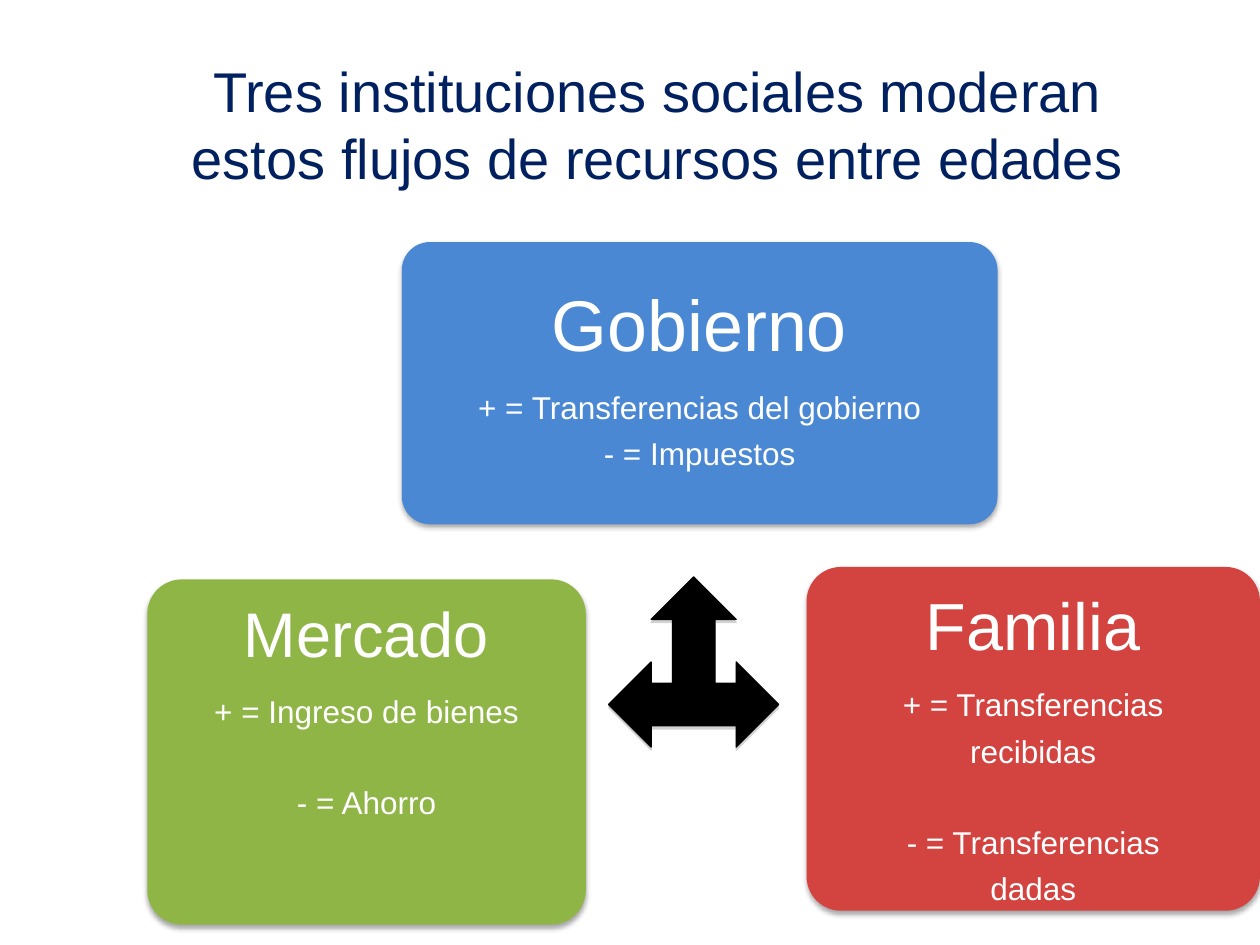
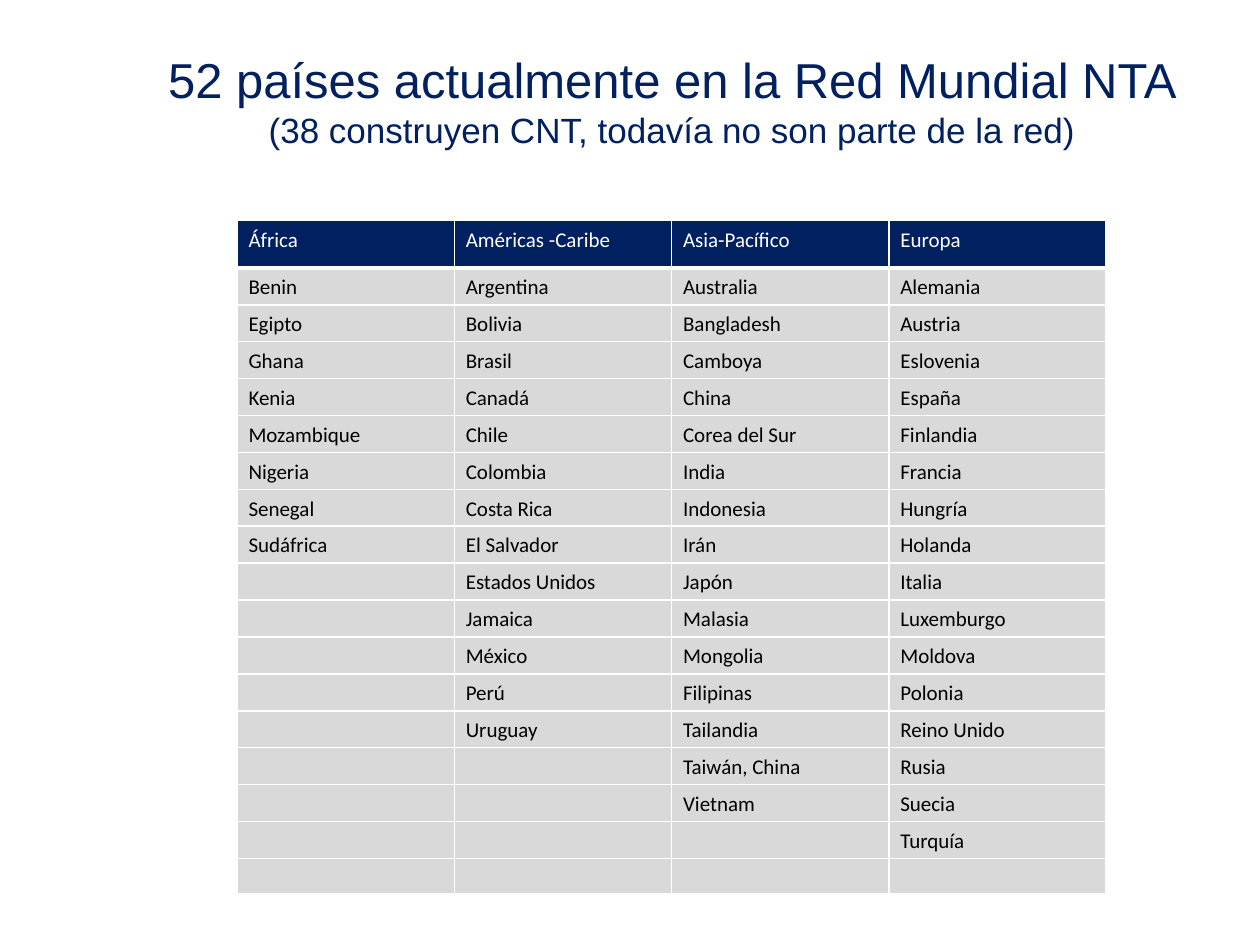
import itertools

import pptx
import pptx.dml.color
import pptx.enum.shapes
import pptx.enum.text
import pptx.oxml
import pptx.oxml.ns
import pptx.util
from pptx.util import Cm, Pt

NAVY, WHITE, BLACK, GRAY = "002060", "FFFFFF", "000000", "D9D9D9"
CENTER = pptx.enum.text.PP_ALIGN.CENTER
MIDDLE = pptx.enum.text.MSO_ANCHOR.MIDDLE
TOP = pptx.enum.text.MSO_ANCHOR.TOP
SHAPES = pptx.enum.shapes.MSO_SHAPE
NAMESPACE = pptx.oxml.ns.nsdecls("a")


def color(hex_string):
    return pptx.dml.color.RGBColor.from_string(hex_string)


def add_shadow(shape, hex_string, blur):
    """Soft shadow straight below the shape."""
    shape.shadow.inherit = False
    effects = shape._element.spPr.find(pptx.oxml.ns.qn("a:effectLst"))
    effects.append(pptx.oxml.parse_xml(
        f'<a:outerShdw {NAMESPACE} blurRad="{Pt(blur)}" dist="{Pt(1.8)}" dir="5400000" '
        f'rotWithShape="0"><a:srgbClr val="{hex_string}"><a:alpha val="35000"/>'
        '</a:srgbClr></a:outerShdw>'))


presentation = pptx.Presentation()
presentation.slide_width = Cm(25.4)
presentation.slide_height = Cm(19.05)

# Slides with their titles: box, then lines with sizes
titles = [
    ((3.1, 0.91, 20.32, 3.18), [("Tres instituciones sociales moderan", 32),
                                ("estos flujos de recursos entre edades", 32)]),
    ((2.97, 0.86, 21.16, 2.31), [("52 países actualmente en la Red Mundial NTA", 28),
                                 ("(38 construyen CNT, todavía no son parte de la red)", 20)]),
]
for box, lines in titles:
    slide = presentation.slides.add_slide(presentation.slide_layouts[6])
    frame = slide.shapes.add_textbox(*map(Cm, box)).text_frame
    frame.word_wrap = True
    frame.vertical_anchor = MIDDLE
    frame.text = "\n".join(text for text, size in lines)
    for paragraph, (text, size) in zip(frame.paragraphs, lines):
        paragraph.alignment = CENTER
        paragraph.font.name = "Arial"
        paragraph.font.size = Pt(size)
        paragraph.font.color.rgb = color(NAVY)
institutions_slide, countries_slide = presentation.slides

# Institution cards: box, fill, top inset, heading, heading size, inflows, outflows
cards = [
    ((8.1, 4.88, 12.01, 5.69), "4A88D4", 0.8, "Gobierno", 41,
     ["+ = Transferencias del gobierno"], ["- = Impuestos"]),
    ((16.26, 11.43, 9.14, 6.93), "D34340", 0.33, "Familia", 38,
     ["+ = Transferencias", "recibidas"], ["- = Transferencias", "dadas"]),
    ((2.97, 11.68, 8.84, 6.96), "90B547", 0.28, "Mercado", 36,
     ["+ = Ingreso de bienes"], ["- = Ahorro"]),
]
for box, fill, inset, heading, heading_size, inflows, outflows in cards:
    card = institutions_slide.shapes.add_shape(SHAPES.ROUNDED_RECTANGLE, *map(Cm, box))
    card.adjustments[0] = 0.1
    card.fill.solid()
    card.fill.fore_color.rgb = color(fill)
    card.line.fill.background()
    add_shadow(card, BLACK, 3.1)
    frame = card.text_frame
    frame.word_wrap = True
    frame.vertical_anchor = TOP
    frame.margin_top, frame.margin_bottom = Cm(inset), 0
    frame.text = "\n".join([heading, *inflows, *outflows])
    for index, paragraph in enumerate(frame.paragraphs):
        paragraph.alignment = CENTER
        paragraph.line_spacing = 0.9
        paragraph.space_after = Pt(7 if index else 14)
        paragraph.font.name = "Arial"
        paragraph.font.size = Pt(18 if index else heading_size)
        paragraph.font.color.rgb = color(WHITE)
    if heading != "Gobierno":
        frame.paragraphs[1 + len(inflows)].space_before = Pt(25.7)

# Three-way arrow between the cards
arrow = institutions_slide.shapes.add_shape(
    SHAPES.LEFT_RIGHT_UP_ARROW, Cm(12.27), Cm(11.63), Cm(3.43), Cm(3.43))
arrow.fill.solid()
arrow.fill.fore_color.rgb = color(BLACK)
arrow.line.color.rgb = color(BLACK)
arrow.line.width = Pt(0.75)
add_shadow(arrow, "808080", 0)

# Countries by region
regions = {
    "África": ["Benin", "Egipto", "Ghana", "Kenia", "Mozambique", "Nigeria", "Senegal",
               "Sudáfrica"],
    "Américas -Caribe": ["Argentina", "Bolivia", "Brasil", "Canadá", "Chile", "Colombia",
                         "Costa Rica", "El Salvador", "Estados Unidos", "Jamaica", "México",
                         "Perú", "Uruguay"],
    "Asia-Pacífico": ["Australia", "Bangladesh", "Camboya", "China", "Corea del Sur", "India",
                      "Indonesia", "Irán", "Japón", "Malasia", "Mongolia", "Filipinas",
                      "Tailandia", "Taiwán, China", "Vietnam"],
    "Europa": ["Alemania", "Austria", "Eslovenia", "España", "Finlandia", "Francia", "Hungría",
               "Holanda", "Italia", "Luxemburgo", "Moldova", "Polonia", "Reino Unido", "Rusia",
               "Suecia", "Turquía"],
}
rows = [list(regions), *itertools.zip_longest(*regions.values(), fillvalue=""),
        [""] * len(regions)]
table = countries_slide.shapes.add_table(
    len(rows), len(regions), Cm(4.78), Cm(4.45), Cm(17.52), Cm(13.44)).table
table.horz_banding = False
for column in table.columns:
    column.width = Cm(4.38)
for row_index, texts in enumerate(rows):
    is_header = row_index == 0
    table.rows[row_index].height = Cm(0.95 if is_header else 0.69)
    for column_index, text in enumerate(texts):
        cell = table.cell(row_index, column_index)
        properties = cell._tc.get_or_add_tcPr()
        for side in "LRTB":
            thick = (side, row_index) in (("B", 0), ("T", 1))
            properties.append(pptx.oxml.parse_xml(
                f'<a:ln{side} {NAMESPACE} w="{Pt(3 if thick else 1)}"><a:solidFill>'
                f'<a:srgbClr val="{WHITE}"/></a:solidFill></a:ln{side}>'))
        cell.fill.solid()
        cell.fill.fore_color.rgb = color(NAVY if is_header else GRAY)
        cell.margin_left = cell.margin_right = Cm(0.23)
        cell.margin_top = cell.margin_bottom = Cm(0.1)
        cell.text = text
        paragraph = cell.text_frame.paragraphs[0]
        paragraph.line_spacing = 1.07
        paragraph.space_after = Pt(8)
        paragraph.font.name = "Calibri"
        paragraph.font.size = Pt(12)
        paragraph.font.bold = False
        paragraph.font.color.rgb = color(WHITE if is_header else BLACK)

presentation.save("out.pptx")
